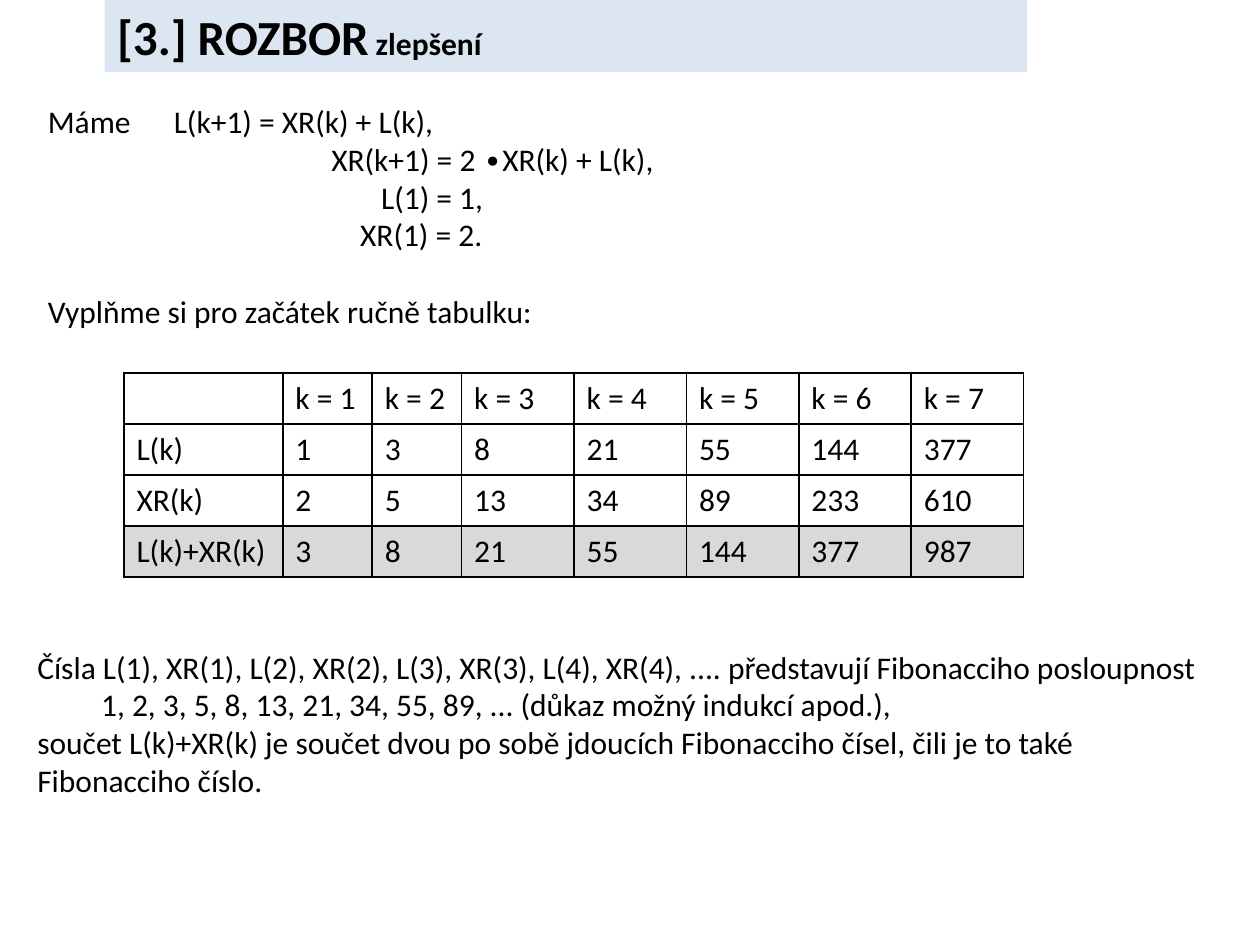
"""Build a slide on Fibonacci recurrences with a table of values."""
from dataclasses import dataclass

from lxml import etree
from pptx import Presentation
from pptx.dml.color import RGBColor
from pptx.enum.shapes import MSO_SHAPE
from pptx.enum.text import MSO_ANCHOR, PP_ALIGN
from pptx.oxml.ns import qn
from pptx.util import Pt

RECTANGLE = MSO_SHAPE.RECTANGLE
LEFT = PP_ALIGN.LEFT
MIDDLE, TOP = MSO_ANCHOR.MIDDLE, MSO_ANCHOR.TOP
FONT = "Calibri"
COLORS = {"text": "000000", "title": "DCE6F2", "sum": "D9D9D9", "cell": "FFFFFF"}


@dataclass
class Line:
    text: str
    indent: float = 0
    tab: float = 0
    before: float = 0


@dataclass
class Block:
    left: float
    top: float
    width: float
    height: float
    lines: list[Line]


BLOCKS = [
    Block(20.2, 54.7, 680.4, 138.2, [
        Line("Máme\tL(k+1) = XR(k) + L(k),", tab=172.8),
        Line("XR(k+1) = 2 ∙XR(k) + L(k),", indent=162),
        Line("L(1) = 1,", indent=190.5),
        Line("XR(1) = 2.", indent=178.5),
        Line("Vyplňme si pro začátek ručně tabulku:", before=22),
    ]),
    Block(14.2, 366.5, 680.4, 94.3, [
        Line("Čísla L(1), XR(1), L(2), XR(2), L(3), XR(3), L(4), XR(4), .... "
             "představují Fibonacciho posloupnost"),
        Line("1, 2, 3, 5, 8, 13, 21, 34, 55, 89, ... (důkaz možný indukcí apod.),",
             indent=36.5),
        Line("součet L(k)+XR(k) je součet dvou po sobě jdoucích Fibonacciho čísel, "
             "čili je to také"),
        Line("Fibonacciho číslo."),
    ]),
]


def add_text(p, text: str, *, size: float = 18, bold: bool = False,
             color: str = "text") -> None:
    """Append a formatted run to a paragraph."""
    r = p.add_run()
    r.text = text
    r.font.name = FONT
    r.font.size = Pt(size)
    r.font.bold = bold
    r.font.color.rgb = RGBColor.from_string(COLORS[color])


def add_block(s, block: Block) -> None:
    """Add a text box with one paragraph per line."""
    box = s.shapes.add_textbox(Pt(block.left), Pt(block.top),
                               Pt(block.width), Pt(block.height))
    tf = box.text_frame
    tf.word_wrap = True
    for i, line in enumerate(block.lines):
        p = tf.add_paragraph() if i else tf.paragraphs[0]
        p.space_before = Pt(line.before)
        pPr = p._p.get_or_add_pPr()
        pPr.set("marL", str(Pt(line.indent)))
        pPr.set("indent", "0")
        if line.tab:
            tabs = etree.SubElement(pPr, qn("a:tabLst"))
            etree.SubElement(tabs, qn("a:tab"), pos=str(Pt(line.tab)), algn="l")
        add_text(p, line.text)


def add_title(s) -> None:
    """Add the title band."""
    sp = s.shapes.add_shape(RECTANGLE, Pt(59.8), Pt(0), Pt(527), Pt(41.2))
    sp.shadow.inherit = False
    sp.fill.solid()
    sp.fill.fore_color.rgb = RGBColor.from_string(COLORS["title"])
    sp.line.fill.background()
    tf = sp.text_frame
    tf.word_wrap = True
    tf.vertical_anchor = TOP
    p = tf.paragraphs[0]
    p.alignment = LEFT
    add_text(p, "[3.] ROZBOR", size=28, bold=True)
    add_text(p, " zlepšení", bold=True)


def set_borders(cell) -> None:
    """Draw a thin line on all four sides of a cell."""
    tcPr = cell._tc.get_or_add_tcPr()
    for i, side in enumerate(("lnL", "lnR", "lnT", "lnB")):
        ln = etree.Element(qn(f"a:{side}"), w=str(Pt(1)))
        fill = etree.SubElement(ln, qn("a:solidFill"))
        etree.SubElement(fill, qn("a:srgbClr"), val=COLORS["text"])
        tcPr.insert(i, ln)


def table_rows(count: int) -> list[list[str]]:
    """Return the header and the values given by the recurrences."""
    rows = [[""], ["L(k)"], ["XR(k)"], ["L(k)+XR(k)"]]
    l_k, xr_k = 1, 2
    for k in range(1, count + 1):
        for row, value in zip(rows, (f"k = {k}", l_k, xr_k, l_k + xr_k)):
            row.append(str(value))
        l_k, xr_k = l_k + xr_k, l_k + 2 * xr_k
    return rows


def add_values(s) -> None:
    """Add the table of values."""
    rows = table_rows(7)
    widths = [90.8] + [51.1] * 2 + [64.26] * 5
    height = 29.16
    table = s.shapes.add_table(len(rows), len(widths), Pt(70.8), Pt(213.2),
                               Pt(sum(widths)), Pt(height * len(rows))).table
    table.first_row = False
    table.horz_banding = False
    for column, width in zip(table.columns, widths):
        column.width = Pt(width)
    for i, row in enumerate(rows):
        table.rows[i].height = Pt(height)
        color = COLORS["sum" if i == len(rows) - 1 else "cell"]
        for j, text in enumerate(row):
            cell = table.cell(i, j)
            cell.vertical_anchor = MIDDLE
            cell.fill.solid()
            cell.fill.fore_color.rgb = RGBColor.from_string(color)
            set_borders(cell)
            if text:
                add_text(cell.text_frame.paragraphs[0], text)


def main() -> None:
    """Build and save the presentation."""
    prs = Presentation()
    prs.slide_width, prs.slide_height = Pt(720), Pt(540)
    s = prs.slides.add_slide(prs.slide_layouts[6])
    intro, conclusion = BLOCKS
    add_block(s, intro)
    add_values(s)
    add_block(s, conclusion)
    add_title(s)
    prs.save("out.pptx")


if __name__ == "__main__":
    main()
